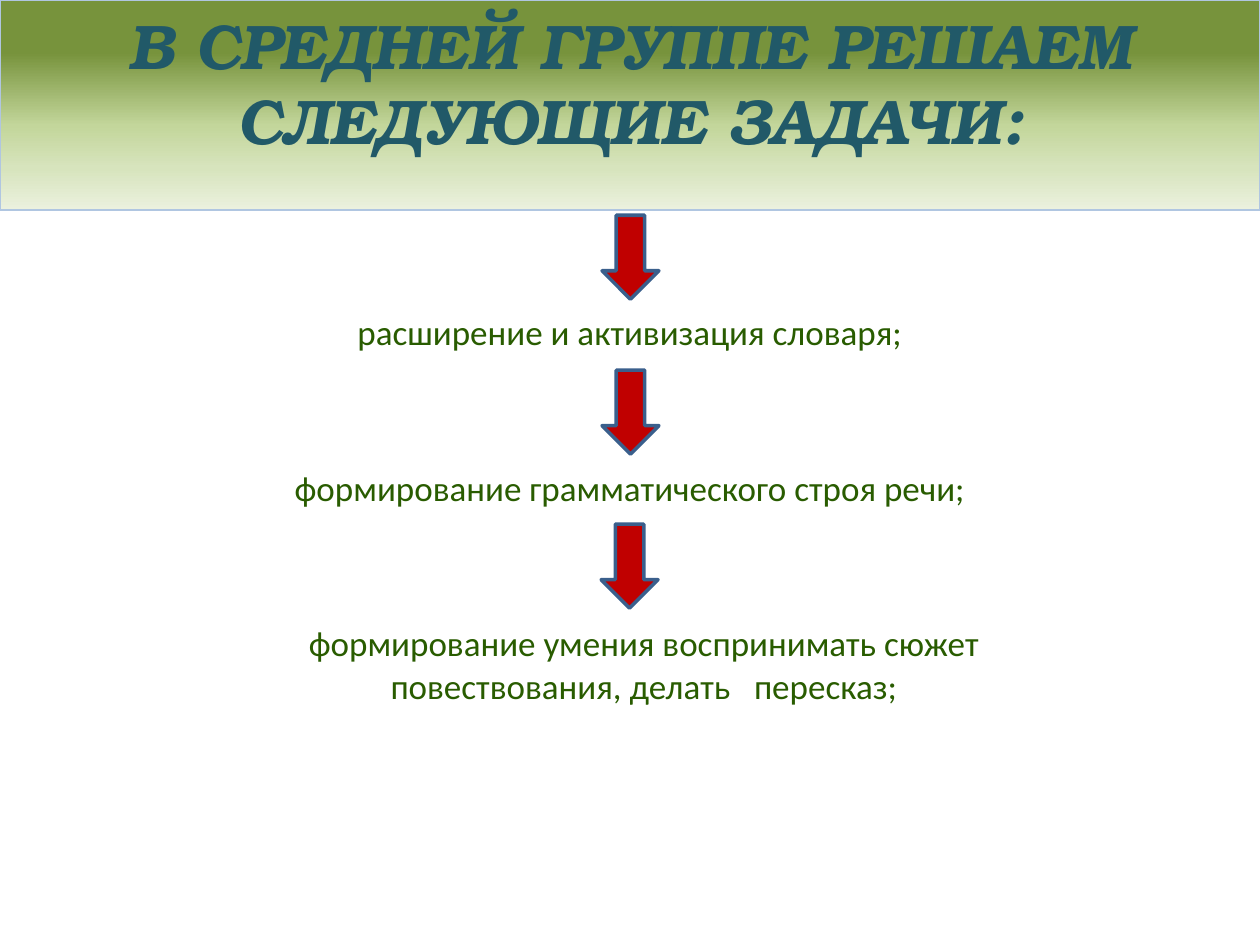
from copy import deepcopy
from pptx import Presentation
from pptx.dml.color import RGBColor
from pptx.enum.shapes import MSO_SHAPE
from pptx.enum.text import MSO_ANCHOR, PP_ALIGN
from pptx.util import Pt

HUES = {
    "head": "215968", "edge": "B0C6E1", "task": "295C00",
    "arrow": "C00000", "rim": "3A5F8C",
}
STOPS = [(0.25, "77933C"), (0.6, "C3D69B"), (0.8, "D7E4BD"), (1, "EBF1DE")]
HEAD = {"name": "TeX Gyre Bonum", "size": Pt(36), "bold": True, "italic": True}
TASK = {"name": "Calibri", "size": Pt(20)}
TASKS = [
    ("расширение и активизация словаря;", (66, 174, 588, 32), MSO_ANCHOR.TOP),
    ("формирование грамматического строя речи;", (19, 253, 682, 41), MSO_ANCHOR.BOTTOM),
    ("формирование умения воспринимать сюжет повествования, делать   пересказ;",
     (132, 366, 472, 41), MSO_ANCHOR.BOTTOM),
]
ARROWS = [(344, 123), (344, 211.5), (343.5, 299.5)]


def write(shape, text, style, hue, anchor):
    frame = shape.text_frame
    frame.word_wrap = True
    frame.vertical_anchor = anchor
    para = frame.paragraphs[0]
    para.alignment = PP_ALIGN.CENTER
    run = para.add_run()
    run.text = text
    for key, value in style.items():
        setattr(run.font, key, value)
    run.font.color.rgb = RGBColor.from_string(HUES[hue])


def draw(kind, box, hue, width):
    shape = slide.shapes.add_shape(kind, *map(Pt, box))
    shape.shadow.inherit = False
    shape.line.color.rgb = RGBColor.from_string(HUES[hue])
    shape.line.width = Pt(width)
    return shape


deck = Presentation()
deck.slide_width, deck.slide_height = Pt(720), Pt(540)
slide = deck.slides.add_slide(deck.slide_layouts[6])

band = draw(MSO_SHAPE.RECTANGLE, (0, 0, 720, 120), "edge", 0.75)
band.fill.gradient()
band.fill.gradient_angle = 270
stops = band.fill._fill._gradFill.gsLst
for stop in list(stops)[:2]:
    stops.append(deepcopy(stop))
for stop, (place, hue) in zip(band.fill.gradient_stops, STOPS):
    stop.position = place
    stop.color.rgb = RGBColor.from_string(hue)
write(band, "В СРЕДНЕЙ ГРУППЕ РЕШАЕМ СЛЕДУЮЩИЕ ЗАДАЧИ:", HEAD, "head", MSO_ANCHOR.TOP)

for text, box, anchor in TASKS:
    write(slide.shapes.add_textbox(*map(Pt, box)), text, TASK, "task", anchor)

for left, top in ARROWS:
    arrow = draw(MSO_SHAPE.DOWN_ARROW, (left, top, 32.5, 48), "rim", 2)
    arrow.fill.solid()
    arrow.fill.fore_color.rgb = RGBColor.from_string(HUES["arrow"])

deck.save("out.pptx")
